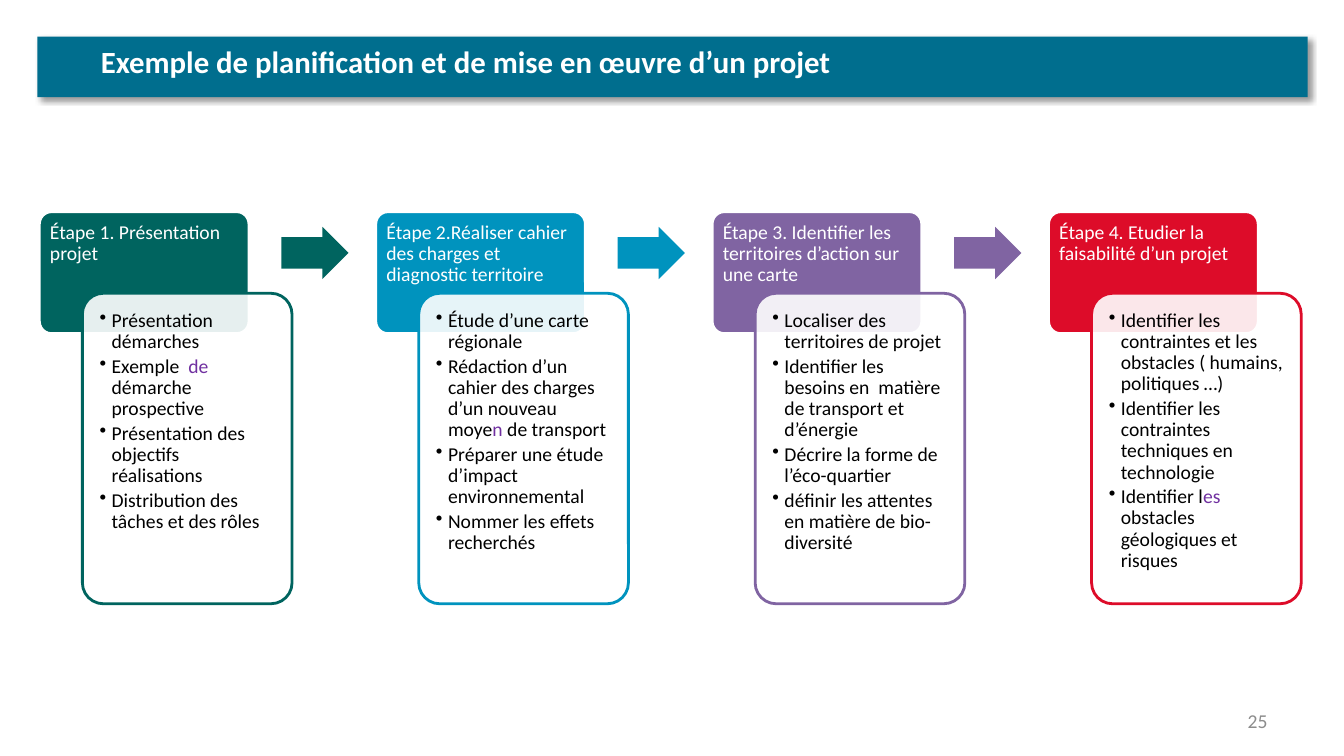
"""Build a slide showing the four steps of planning and carrying out a project."""
from dataclasses import dataclass
from typing import Any

from lxml.etree import SubElement
from pptx import Presentation
from pptx.dml.color import RGBColor
from pptx.enum.shapes import MSO_SHAPE as Preset
from pptx.enum.text import MSO_ANCHOR as Anchor, PP_ALIGN as Align
from pptx.oxml.ns import qn
from pptx.util import Emu, Inches, Pt

COLORS = {
    "banner": "006E8E", "white": "FFFFFF", "black": "000000", "accent": "7030A0",
    "number": "8C8C8C", "green": "00645F", "blue": "0093BE", "purple": "8064A2",
    "red": "DD0C29",
}
WIDTH, HEIGHT = Inches(13.33), Inches(7.5)
COLUMN, ROW = WIDTH / 100, HEIGHT / 100
FIRST_COLUMN, STEP_PITCH = 2.93, 25.03
HEADER_FRAME = {"margin_left": Inches(0.07), "margin_right": Inches(0.07),
                "margin_top": Inches(0.07), "margin_bottom": Inches(0.06)}
CARD_FRAME = {f"margin_{side}": Inches(0.11) for side in ("left", "right", "top", "bottom")}
TIGHT = {"alignment": Align.LEFT, "line_spacing": 0.9, "space_after": Pt(2.4)}


@dataclass(frozen=True)
class Area:
    """Place on the slide in grid columns and rows."""
    column: float
    row: float
    columns: float
    rows: float

    def emu(self) -> tuple[Emu, ...]:
        return tuple(Emu(round(length)) for length in (
            self.column * COLUMN, self.row * ROW, self.columns * COLUMN, self.rows * ROW))

    def shifted(self, columns: float) -> "Area":
        return Area(self.column + columns, self.row, self.columns, self.rows)


@dataclass(frozen=True)
class Step:
    """A project step; every second run of a point is accented."""
    heading: str
    color: str
    points: tuple[tuple[str, ...], ...]


HEADER = Area(FIRST_COLUMN, 28, 15.6, 16.13)
CARD = Area(FIRST_COLUMN + 3.2, 38.8, 15.6, 41.07)
ARROW = Area(FIRST_COLUMN + 18, 30, 5, 6.93)

STEPS = (
    Step("Étape 1. Présentation projet", "green", (
        ("Présentation démarches",),
        ("Exemple  ", "de ", "démarche prospective"),
        ("Présentation des objectifs réalisations",),
        ("Distribution des tâches et des rôles",))),
    Step("Étape 2.Réaliser cahier des charges et diagnostic territoire", "blue", (
        ("Étude d’une carte régionale",),
        ("Rédaction d’un cahier des charges d’un nouveau moye", "n ", "de transport"),
        ("Préparer une étude d’impact environnemental",),
        ("Nommer les effets recherchés",))),
    Step("Étape 3. Identifier les territoires d’action sur une carte", "purple", (
        ("Localiser des territoires de projet",),
        ("Identifier les besoins en  matière de transport et d’énergie",),
        ("Décrire la forme de l’éco-quartier",),
        ("définir les attentes en matière de bio-diversité",))),
    Step("Étape 4. Etudier la faisabilité d’un projet", "red", (
        ("Identifier les contraintes et les obstacles ( humains, politiques …)",),
        ("Identifier les contraintes techniques en technologie",),
        ("Identifier l", "es ", "obstacles géologiques et risques"))),
)


def rgb(name: str) -> RGBColor:
    return RGBColor.from_string(COLORS[name])


def apply(target: Any, values: dict[str, Any]) -> None:
    for name, value in values.items():
        setattr(target, name, value)


def add_block(slide: Any, preset: Any, area: Area, fill: str, line: str = "",
              adjustments: tuple[float, ...] = ()) -> Any:
    block = slide.shapes.add_shape(preset, *area.emu())
    block.shadow.inherit = False
    block.fill.solid()
    block.fill.fore_color.rgb = rgb(fill)
    if line:
        block.line.color.rgb = rgb(line)
        block.line.width = Pt(2)
    else:
        block.line.fill.background()
    for index, value in enumerate(adjustments):
        block.adjustments[index] = value
    return block


def prepare_frame(frame: Any, values: dict[str, Any]) -> None:
    apply(frame, {"word_wrap": True, "vertical_anchor": Anchor.TOP, **values})


def write_run(paragraph: Any, text: str, color: str, size: float = 14,
              bold: bool = False) -> None:
    run = paragraph.add_run()
    run.text = text
    apply(run.font, {"name": "Calibri", "size": Pt(size), "bold": bold})
    run.font.color.rgb = rgb(color)


def add_bullet(paragraph: Any) -> None:
    properties = paragraph._p.get_or_add_pPr()
    properties.set("marL", str(Inches(0.12)))
    properties.set("indent", str(-Inches(0.12)))
    SubElement(properties, qn("a:buChar"), char="•")


def add_banner(slide: Any) -> None:
    banner = add_block(slide, Preset.RECTANGLE, Area(2.78, 4.85, 94.52, 8), "banner")
    shadow = SubElement(banner._element.spPr.find(qn("a:effectLst")), qn("a:outerShdw"),
                        blurRad=str(Pt(4)), dist=str(Pt(3)), dir="2700000",
                        algn="tl", rotWithShape="0")
    tint = SubElement(shadow, qn("a:srgbClr"), val=COLORS["black"])
    SubElement(tint, qn("a:alpha"), val="40000")
    title = slide.shapes.title
    title._element.addprevious(banner._element)
    apply(title, dict(zip(("left", "top", "width", "height"),
                          Area(6.75, 4.93, 90, 16.67).emu())))
    prepare_frame(title.text_frame, {})
    heading = title.text_frame.paragraphs[0]
    heading.alignment = Align.LEFT
    write_run(heading, "Exemple de planification et de mise en œuvre d’un projet",
              "white", 22, True)


def add_step(slide: Any, step: Step, shift: float, has_next: bool) -> None:
    header = add_block(slide, Preset.ROUNDED_RECTANGLE, HEADER.shifted(shift),
                       step.color, "white", (0.1,))
    prepare_frame(header.text_frame, HEADER_FRAME)
    heading = header.text_frame.paragraphs[0]
    apply(heading, TIGHT)
    write_run(heading, step.heading, "white")

    card = add_block(slide, Preset.ROUNDED_RECTANGLE, CARD.shifted(shift),
                     "white", step.color, (0.1,))
    tint = card._element.spPr.find(qn("a:solidFill")).find(qn("a:srgbClr"))
    SubElement(tint, qn("a:alpha"), val="90000")
    frame = card.text_frame
    prepare_frame(frame, CARD_FRAME)
    for index, runs in enumerate(step.points):
        point = frame.add_paragraph() if index else frame.paragraphs[0]
        add_bullet(point)
        apply(point, TIGHT)
        for position, text in enumerate(runs):
            write_run(point, text, "accent" if position % 2 else "black")

    if has_next:
        add_block(slide, Preset.RIGHT_ARROW, ARROW.shifted(shift), step.color,
                  adjustments=(0.6, 0.5))


def add_page_number(slide: Any) -> None:
    page_number = slide.shapes.add_textbox(*Area(90.17, 92.67, 4.88, 5.33).emu())
    prepare_frame(page_number.text_frame, {"vertical_anchor": Anchor.MIDDLE})
    line = page_number.text_frame.paragraphs[0]
    line.alignment = Align.RIGHT
    write_run(line, "25", "number")


def main() -> None:
    deck = Presentation()
    apply(deck, {"slide_width": WIDTH, "slide_height": HEIGHT})
    slide = deck.slides.add_slide(deck.slide_layouts[5])
    add_banner(slide)
    for index, step in enumerate(STEPS):
        add_step(slide, step, index * STEP_PITCH, index < len(STEPS) - 1)
    add_page_number(slide)
    deck.save("out.pptx")


if __name__ == "__main__":
    main()
